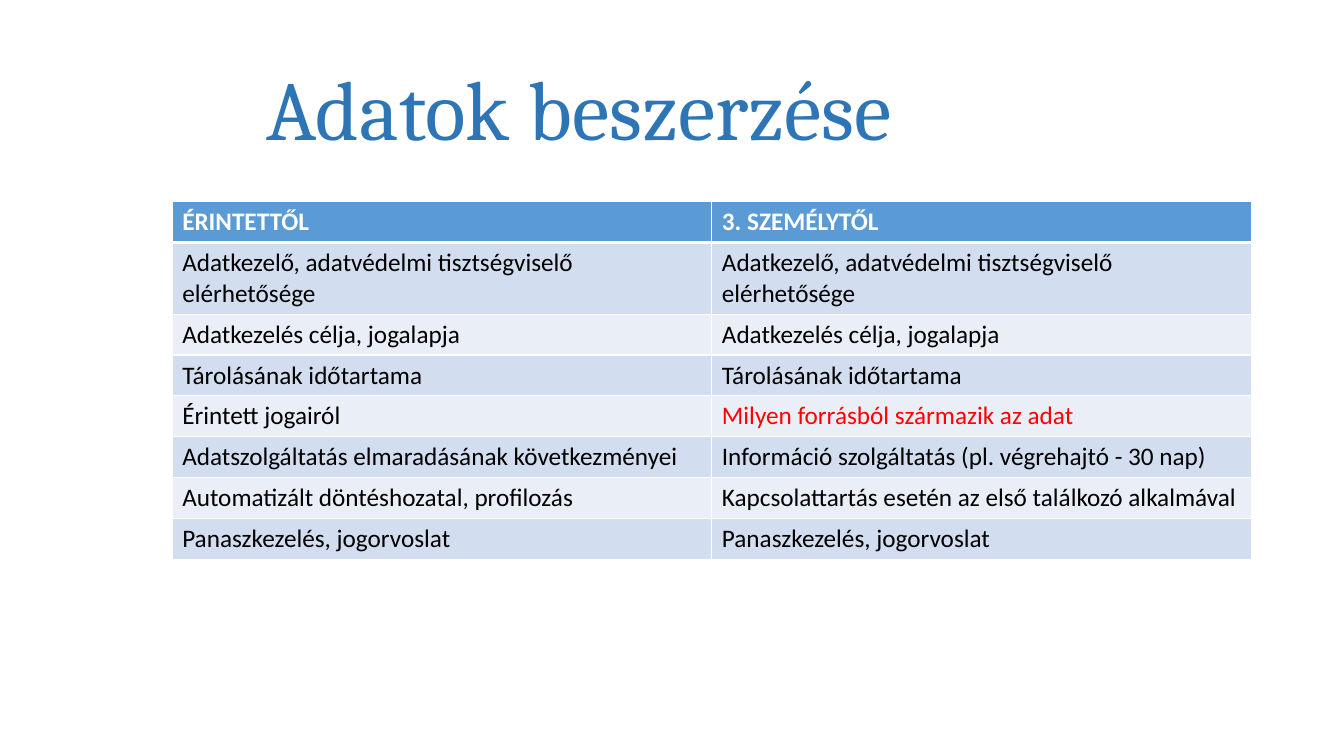
"""Build the slide comparing data obtained from the subject and from third parties."""
import lxml.etree
import pptx
import pptx.dml.color
import pptx.enum.text
import pptx.oxml.ns
import pptx.util

HEADING = "Adatok beszerzése"
SOURCES = [
    ("ÉRINTETTŐL", "3. SZEMÉLYTŐL"),
    ("Adatkezelő, adatvédelmi tisztségviselő elérhetősége",
     "Adatkezelő, adatvédelmi tisztségviselő elérhetősége"),
    ("Adatkezelés célja, jogalapja", "Adatkezelés célja, jogalapja"),
    ("Tárolásának időtartama", "Tárolásának időtartama"),
    ("Érintett jogairól", "Milyen forrásból származik az adat"),
    ("Adatszolgáltatás elmaradásának következményei",
     "Információ szolgáltatás (pl. végrehajtó - 30 nap)"),
    ("Automatizált döntéshozatal, profilozás",
     "Kapcsolattartás esetén az első találkozó alkalmával"),
    ("Panaszkezelés, jogorvoslat", "Panaszkezelés, jogorvoslat"),
]
HIGHLIGHT = "Milyen forrásból származik az adat"
COLORS = {"heading": "2E75B6", "header": "5B9BD5", "odd": "D2DEEF", "even": "EAEFF7",
          "white": "FFFFFF", "text": "000000", "highlight": "FF0000"}
HEADING_FONT = {"name": "Cambria", "size": pptx.util.Pt(60)}
CELL_FONT = {"name": "Calibri", "size": pptx.util.Pt(18)}
HEADING_BOX = {"left": 183, "top": 29, "width": 711, "height": 104}
TABLE_BOX = (123, 144, 771, 234)
ROW_HEIGHT = 29.2


def rgb(key):
    return pptx.dml.color.RGBColor.from_string(COLORS[key])


def format_font(font, values, color):
    for attribute, value in values.items():
        setattr(font, attribute, value)
    font.color.rgb = rgb(color)


def add_borders(cell, widths):
    properties = cell._tc.get_or_add_tcPr()
    qn = pptx.oxml.ns.qn
    for side, width in widths.items():
        line = lxml.etree.SubElement(properties, qn(f"a:ln{side}"), w=str(pptx.util.Pt(width)))
        solid = lxml.etree.SubElement(line, qn("a:solidFill"))
        lxml.etree.SubElement(solid, qn("a:srgbClr"), val=COLORS["white"])


def add_heading(slide):
    heading = slide.shapes.title
    for attribute, value in HEADING_BOX.items():
        setattr(heading, attribute, pptx.util.Pt(value))
    frame = heading.text_frame
    frame.text = HEADING
    frame.vertical_anchor = pptx.enum.text.MSO_ANCHOR.MIDDLE
    paragraph = frame.paragraphs[0]
    paragraph.alignment = pptx.enum.text.PP_ALIGN.LEFT
    paragraph.line_spacing = 0.9
    format_font(paragraph.runs[0].font, HEADING_FONT, "heading")


def add_sources(slide):
    box = [pptx.util.Pt(value) for value in TABLE_BOX]
    table = slide.shapes.add_table(len(SOURCES), len(SOURCES[0]), *box).table
    for row_index, texts in enumerate(SOURCES):
        table.rows[row_index].height = pptx.util.Pt(ROW_HEIGHT)
        is_header = row_index == 0
        fill = "header" if is_header else ("even", "odd")[row_index % 2]
        borders = {"L": 1, "R": 1, "T": 3 if row_index == 1 else 1, "B": 3 if is_header else 1}
        for column_index, text in enumerate(texts):
            cell = table.cell(row_index, column_index)
            add_borders(cell, borders)
            cell.fill.solid()
            cell.fill.fore_color.rgb = rgb(fill)
            cell.text = text
            color = "white" if is_header else "highlight" if text == HIGHLIGHT else "text"
            font = cell.text_frame.paragraphs[0].runs[0].font
            format_font(font, {**CELL_FONT, "bold": is_header}, color)


def main():
    deck = pptx.Presentation()
    deck.slide_width, deck.slide_height = pptx.util.Pt(960), pptx.util.Pt(540)
    slide = deck.slides.add_slide(deck.slide_layouts[5])
    add_heading(slide)
    add_sources(slide)
    deck.save("out.pptx")


if __name__ == "__main__":
    main()
